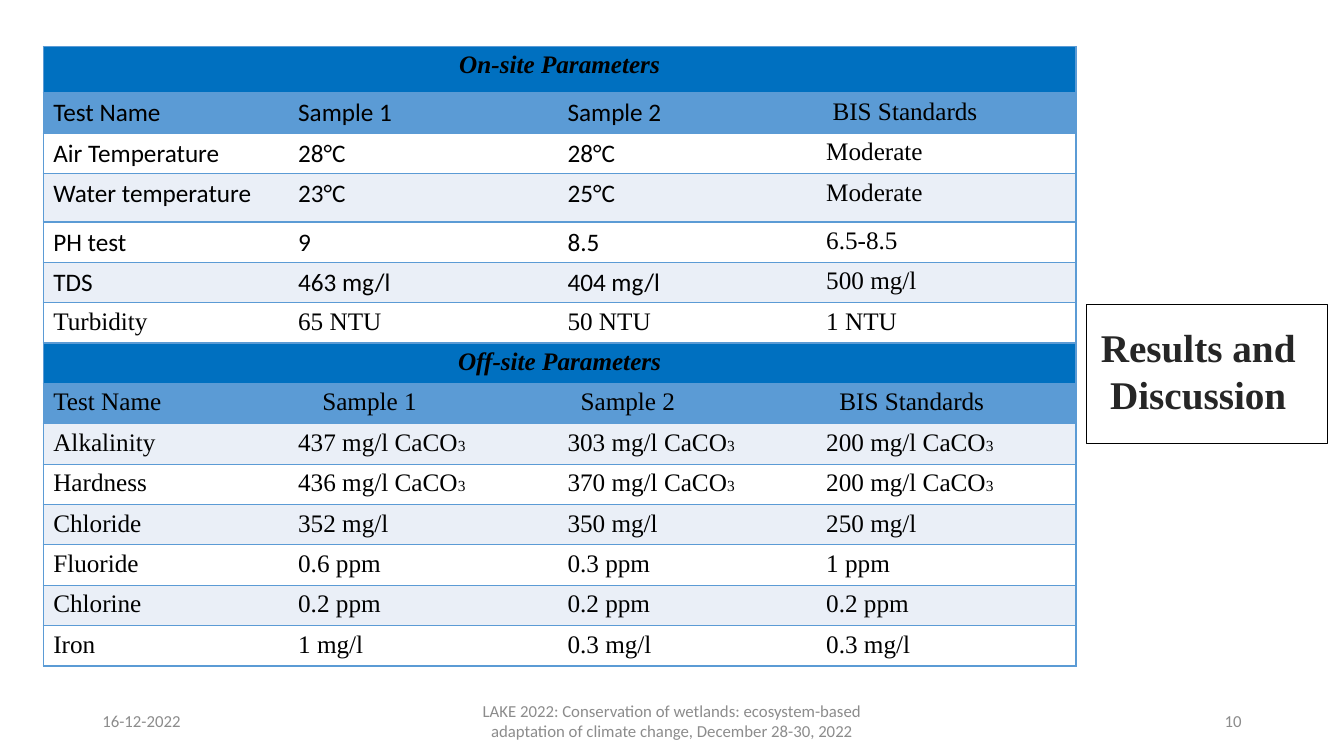
from pptx import Presentation
from pptx.dml.color import RGBColor
from pptx.enum.shapes import MSO_SHAPE
from pptx.enum.text import MSO_ANCHOR, PP_ALIGN
from pptx.oxml import parse_xml
from pptx.oxml.ns import nsdecls
from pptx.util import Cm, Pt

COLORS = {
    "banner": "0070C0",
    "heading": "5B9BD5",
    "band": "EAEFF7",
    "plain": "FFFFFF",
    "rule": "5B9BD5",
    "ink": "000000",
    "title": "262626",
    "footer": "8C8C8C",
}
SERIF, SANS = "Times New Roman", "Calibri"
NO_STYLE = "{2D5ABB26-0587-4C30-8999-92F81FD0307C}"


def add_run(paragraph, text, color, **font_format):
    run = paragraph.add_run()
    run.text = text
    run.font.color.rgb = RGBColor.from_string(COLORS[color])
    for name, value in font_format.items():
        setattr(run.font, name, value)


def add_label(slide, box, text, align, anchor, color, **font_format):
    """Add a wrapping text box; box is left, top, width, height in cm."""
    frame = slide.shapes.add_textbox(*map(Cm, box)).text_frame
    frame.word_wrap = True
    frame.vertical_anchor = anchor
    frame.paragraphs[0].alignment = align
    add_run(frame.paragraphs[0], text, color, **font_format)


prs = Presentation()
prs.slide_width, prs.slide_height = Cm(33.87), Cm(19.05)
slide = prs.slides.add_slide(prs.slide_layouts[6])

# Footer
for left, width, text, align in [
    (2.33, 7.62, "16-12-2022", PP_ALIGN.LEFT),
    (11.22, 11.43, "LAKE 2022: Conservation of wetlands: ecosystem-based "
     "adaptation of climate change, December 28-30, 2022", PP_ALIGN.CENTER),
    (23.92, 7.62, "10", PP_ALIGN.RIGHT),
]:
    add_label(slide, (left, 17.66, width, 1.01), text, align,
              MSO_ANCHOR.MIDDLE, "footer", size=Pt(12), name=SANS)

# Water test results: fill, then the texts of the row
rows = [
    ("banner", ["On-site Parameters"]),
    ("heading", ["Test Name", "Sample 1", "Sample 2", " BIS Standards"]),
    ("plain", ["Air Temperature", "28°C", "28°C", "Moderate"]),
    ("band", ["Water temperature", "23°C", "25°C", "Moderate"]),
    ("plain", ["PH test", "9", "8.5", "6.5-8.5"]),
    ("band", ["TDS", "463 mg/l", "404 mg/l", "500 mg/l"]),
    ("plain", ["Turbidity", "65 NTU", "50 NTU", "1 NTU"]),
    ("banner", ["Off-site Parameters"]),
    ("heading", ["Test Name", "Sample 1", "Sample 2", "BIS Standards"]),
    ("band", ["Alkalinity", "437 mg/l CaCO3", "303 mg/l CaCO3", "200 mg/l CaCO3"]),
    ("plain", ["Hardness", "436 mg/l CaCO3", "370 mg/l CaCO3", "200 mg/l CaCO3"]),
    ("band", ["Chloride", "352 mg/l", "350 mg/l", "250 mg/l"]),
    ("plain", ["Fluoride", "0.6 ppm", "0.3 ppm", "1 ppm"]),
    ("band", ["Chlorine", "0.2 ppm", "0.2 ppm", "0.2 ppm"]),
    ("plain", ["Iron", "1 mg/l", "0.3 mg/l", "0.3 mg/l"]),
]
column_widths = [6.17, 0.33, 6.18, 0.33, 6.19, 0.33, 6.22]
row_heights = {0: 1.17, 3: 1.22}
last_column = len(column_widths) - 1
offsite_heading = 8
sans_rows = range(1, 6)

results = slide.shapes.add_table(
    len(rows), len(column_widths), Cm(1.09), Cm(1.17),
    Cm(sum(column_widths)), Cm(14.27)).table
results.first_row = results.horz_banding = False
results._tbl.tblPr.find("{*}tableStyleId").text = NO_STYLE
for column, width in zip(results.columns, column_widths):
    column.width = Cm(width)

for r, (fill, texts) in enumerate(rows):
    results.rows[r].height = Cm(row_heights.get(r, 0.92))
    for c in range(len(column_widths)):
        cell = results.cell(r, c)
        sides = ["L"] * (c == 0) + ["R"] * (c == last_column) + ["T", "B"]
        if fill == "banner" and c == 0:
            sides.insert(1, "R")
        elif c == last_column - 1 and r != offsite_heading:
            sides.insert(0, "R")
        for side in sides:
            cell._tc.get_or_add_tcPr().append(parse_xml(
                f'<a:ln{side} {nsdecls("a")} w="12700"><a:solidFill>'
                f'<a:srgbClr val="{COLORS["rule"]}"/></a:solidFill></a:ln{side}>'))
        cell.fill.solid()
        cell.fill.fore_color.rgb = RGBColor.from_string(COLORS[fill])

    if fill == "banner":
        spans = [(0, last_column)]
    elif r == offsite_heading:
        spans = [(0, 1), (2, 3), (4, 5), (6, 6)]
    else:
        spans = [(0, 0), (1, 2), (3, 4), (5, 6)]

    for i, ((first, last), text) in enumerate(zip(spans, texts)):
        cell = results.cell(r, first)
        if last > first:
            cell.merge(results.cell(r, last))
        paragraph = cell.text_frame.paragraphs[0]
        font_format = {"size": Pt(18), "name": SERIF}
        if fill == "banner":
            paragraph.alignment = PP_ALIGN.CENTER
            font_format.update(bold=True, italic=True)
        elif r in sans_rows and i < 3:
            font_format["name"] = SANS
        formula = text.endswith("CaCO3")
        add_run(paragraph, text[:-1] if formula else text, "ink", **font_format)
        if formula:
            add_run(paragraph, text[-1], "ink", size=Pt(11), name=SERIF)

# Section title with its frame
add_label(slide, (26.04, 8.03, 8.31, 2.64), "Results and Discussion",
          PP_ALIGN.CENTER, MSO_ANCHOR.TOP, "title",
          size=Pt(28), name=SERIF, bold=True)
title_frame = slide.shapes.add_shape(
    MSO_SHAPE.RECTANGLE, Cm(27.38), Cm(7.67), Cm(6.07), Cm(3.51))
title_frame.shadow.inherit = False
title_frame.fill.background()
title_frame.line.color.rgb = RGBColor.from_string(COLORS["ink"])
title_frame.line.width = Pt(1)

prs.save("out.pptx")
